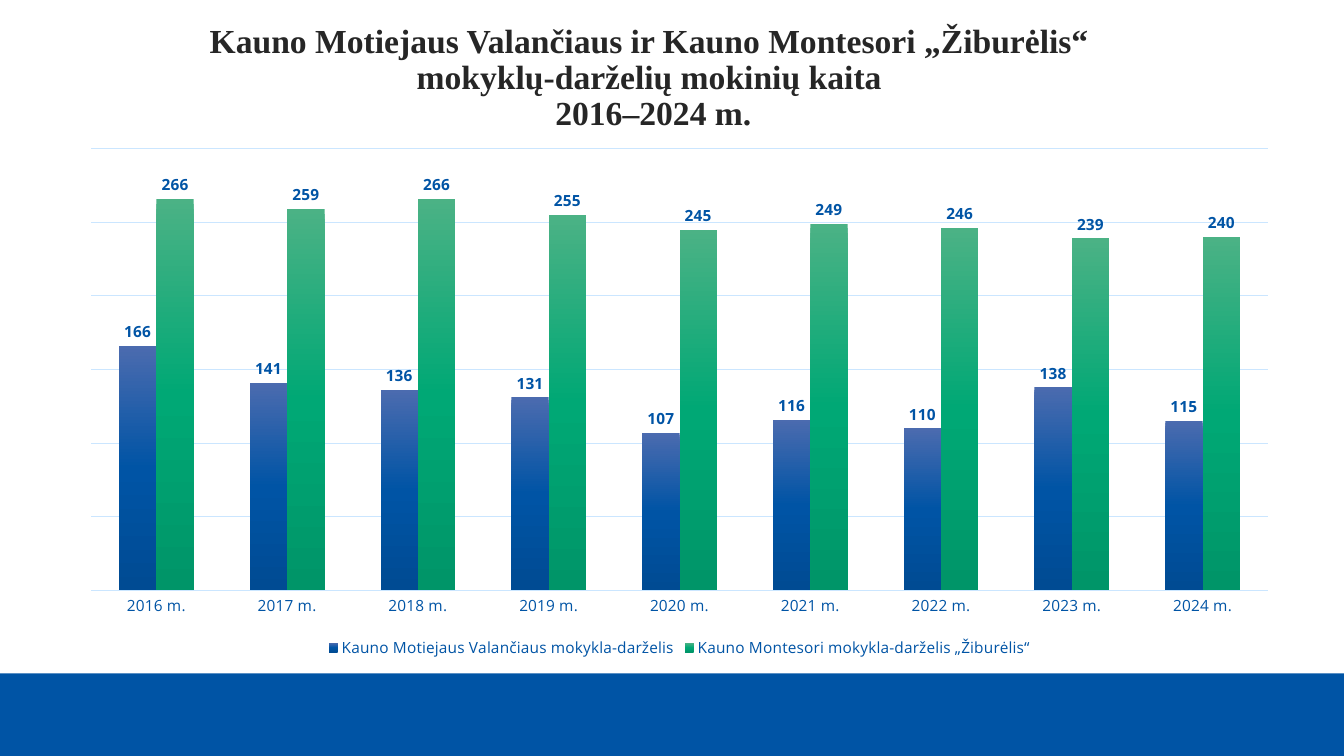
from lxml import etree
from pptx import Presentation
from pptx.chart.data import CategoryChartData
from pptx.dml.color import RGBColor
from pptx.enum.chart import XL_CHART_TYPE, XL_LABEL_POSITION, XL_LEGEND_POSITION, XL_TICK_MARK
from pptx.enum.shapes import MSO_SHAPE
from pptx.enum.text import MSO_ANCHOR, PP_ALIGN
from pptx.oxml.ns import qn
from pptx.util import Inches, Pt

COLOURS = {"blue": "0054A5", "grid": "CBE6FF", "text": "262626"}
TITLE = (
    "Kauno Motiejaus Valančiaus ir Kauno Montesori „Žiburėlis“ \v"
    "mokyklų-darželių mokinių kaita \v2016–2024 m."
)
YEARS = [f"{year} m." for year in range(2016, 2025)]
SCHOOLS = [
    ("Kauno Motiejaus Valančiaus mokykla-darželis",
     [166, 141, 136, 131, 107, 116, 110, 138, 115],
     ["4B6BAF", "0054A5", "004B93"]),
    ("Kauno Montesori mokykla-darželis „Žiburėlis“",
     [266, 259, 266, 255, 245, 249, 246, 239, 240],
     ["4BB285", "00A875", "009568"]),
]


def style_font(font, name, size, colour, bold=False):
    font.name = name
    font.size = Pt(size)
    font.bold = bold
    font.color.rgb = RGBColor.from_string(COLOURS[colour])


def style_line(line, colour):
    line.width = Pt(0.75)
    line.color.rgb = RGBColor.from_string(COLOURS[colour])


def add_footer_band(page):
    band = page.shapes.add_shape(
        MSO_SHAPE.RECTANGLE, Inches(0), Inches(6.68), Inches(13.33), Inches(0.82))
    band.shadow.inherit = False
    band.fill.solid()
    band.fill.fore_color.rgb = RGBColor.from_string(COLOURS["blue"])
    band.line.fill.background()


def add_title(page):
    box = page.shapes.add_textbox(Inches(1.11), Inches(0.22), Inches(10.74), Inches(1.15))
    frame = box.text_frame
    frame.word_wrap = True
    frame.vertical_anchor = MSO_ANCHOR.BOTTOM
    para = frame.paragraphs[0]
    para.text = TITLE
    para.alignment = PP_ALIGN.CENTER
    para.line_spacing = 0.9
    for span in para.runs:
        style_font(span.font, "Times New Roman", 24, "text", True)


def fill_gradient(series, stops):
    series.format.fill.gradient()
    series.format.fill.gradient_angle = 270
    stop_list = series.format.fill._fill._gradFill.find(qn("a:gsLst"))
    for stop in list(stop_list):
        stop_list.remove(stop)
    for index, colour in enumerate(stops):
        stop = etree.SubElement(stop_list, qn("a:gs"), pos=str(index * 50000))
        etree.SubElement(stop, qn("a:srgbClr"), val=colour)


def label_values(series):
    labels = series.data_labels
    labels.show_value = True
    labels.position = XL_LABEL_POSITION.OUTSIDE_END
    style_font(labels.font, "Open Sans", 11, "blue", True)


def style_axes(chart):
    years = chart.category_axis
    years.major_tick_mark = XL_TICK_MARK.NONE
    years.minor_tick_mark = XL_TICK_MARK.NONE
    style_font(years.tick_labels.font, "Open Sans", 11, "blue")
    style_line(years.format.line, "grid")
    pupils = chart.value_axis
    pupils.minimum_scale = 0
    pupils.maximum_scale = 300
    pupils.major_unit = 50
    pupils.has_major_gridlines = True
    style_line(pupils.major_gridlines.format.line, "grid")
    pupils.visible = False


def add_pupil_chart(page):
    data = CategoryChartData()
    data.categories = YEARS
    for name, values, _ in SCHOOLS:
        data.add_series(name, values)
    chart = page.shapes.add_chart(
        XL_CHART_TYPE.COLUMN_CLUSTERED,
        Inches(0.66), Inches(1.37), Inches(12.16), Inches(5.2), data).chart
    chart.has_title = False
    style_font(chart.font, "Open Sans", 10, "text")
    style_axes(chart)
    plot = chart.plots[0]
    plot.gap_width = 150
    plot.overlap = 0
    plot.vary_by_categories = False
    for series, (_, _, stops) in zip(plot.series, SCHOOLS):
        fill_gradient(series, stops)
        label_values(series)
    chart.has_legend = True
    chart.legend.position = XL_LEGEND_POSITION.BOTTOM
    chart.legend.include_in_layout = False
    style_font(chart.legend.font, "Open Sans", 11, "blue")


def main():
    deck = Presentation()
    deck.slide_width = Inches(13.33)
    deck.slide_height = Inches(7.5)
    page = deck.slides.add_slide(deck.slide_layouts[6])
    add_footer_band(page)
    add_title(page)
    add_pupil_chart(page)
    deck.save("out.pptx")


if __name__ == "__main__":
    main()
